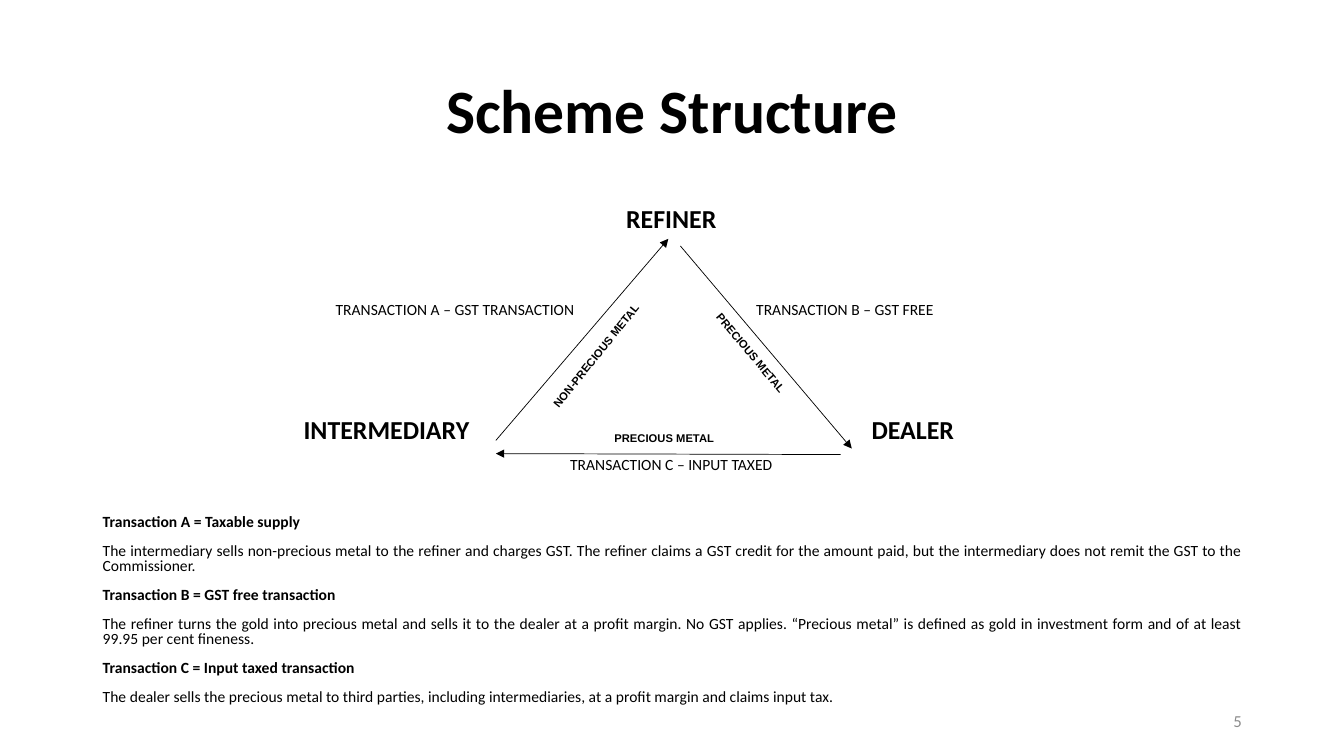
import pptx
import pptx.util
import pptx.dml.color
import pptx.enum.shapes
import pptx.enum.text
from lxml import etree
from pptx.oxml.ns import qn

Pt = pptx.util.Pt
ALIGN = pptx.enum.text.PP_ALIGN
ANCHOR = pptx.enum.text.MSO_ANCHOR

COLOURS = {"text": "000000", "line": "000000", "page": "8C8C8C"}
MARGIN, CONTENT_WIDTH = 73.4, 813.6

# Centre x, centre y, text, size, bold
PARTY_SIZE, BODY_SIZE = 18.5, 11.1
DIAGRAM_LABELS = [
    (479.5, 155.5, "REFINER", PARTY_SIZE, True),
    (276, 306.5, "INTERMEDIARY", PARTY_SIZE, True),
    (652, 306.5, "DEALER", PARTY_SIZE, True),
    (325, 221, "TRANSACTION A – GST TRANSACTION", BODY_SIZE, False),
    (603.5, 221, "TRANSACTION B – GST FREE", BODY_SIZE, False),
    (479.5, 331.5, "TRANSACTION C – INPUT TAXED", BODY_SIZE, False),
]

# Centre x, centre y, text, rotation
METAL_LABELS = [
    (425.5, 254, "NON-PRECIOUS METAL", 308.9),
    (536.4, 252, "PRECIOUS METAL", 50.1),
    (474.5, 313.2, "PRECIOUS METAL", 0),
]

# Start x, start y, end x, end y
ARROWS = [
    (486, 175.7, 608.4, 320.4),
    (600.5, 324.7, 354.2, 324),
    (354.2, 314.6, 477.4, 170.6),
]

EXPLANATIONS = [
    ("Transaction A = Taxable supply",
     "The intermediary sells non-precious metal to the refiner and charges GST. "
     "The refiner claims a GST credit for the amount paid, but the intermediary "
     "does not remit the GST to the Commissioner."),
    ("Transaction B = GST free transaction",
     "The refiner turns the gold into precious metal and sells it to the dealer "
     "at a profit margin. No GST applies. “Precious metal” is defined as gold in "
     "investment form and of at least 99.95 per cent fineness."),
    ("Transaction C = Input taxed transaction",
     "The dealer sells the precious metal to third parties, including "
     "intermediaries, at a profit margin and claims input tax."),
]


def colour(name):
    return pptx.dml.color.RGBColor.from_string(COLOURS[name])


def add_text_box(slide, left, top, width, height, anchor=ANCHOR.MIDDLE):
    shape = slide.shapes.add_textbox(Pt(left), Pt(top), Pt(width), Pt(height))
    frame = shape.text_frame
    frame.word_wrap = True
    frame.vertical_anchor = anchor
    frame.margin_left = frame.margin_right = 0
    frame.margin_top = frame.margin_bottom = 0
    return shape


def write(paragraph, text, size, bold=False, font="Calibri", align=ALIGN.CENTER,
          colour_name="text"):
    paragraph.alignment = align
    run = paragraph.add_run()
    run.text = text
    run.font.name = font
    run.font.size = Pt(size)
    run.font.bold = bold
    run.font.color.rgb = colour(colour_name)


def add_label(slide, centre_x, centre_y, text, size, bold, font="Calibri", rotation=0):
    width, height = 220, 20
    shape = add_text_box(slide, centre_x - width / 2, centre_y - height / 2, width, height)
    shape.rotation = rotation
    write(shape.text_frame.paragraphs[0], text, size, bold, font)


def add_arrow(slide, start_x, start_y, end_x, end_y):
    connector = slide.shapes.add_connector(
        pptx.enum.shapes.MSO_CONNECTOR.STRAIGHT,
        Pt(start_x), Pt(start_y), Pt(end_x), Pt(end_y))
    connector.line.color.rgb = colour("line")
    connector.line.width = Pt(0.5)
    etree.SubElement(connector.line._get_or_add_ln(), qn("a:tailEnd"), type="triangle")
    etree.SubElement(connector._element.spPr, qn("a:effectLst"))


def add_explanations(slide):
    shape = add_text_box(slide, MARGIN, 368.5, CONTENT_WIDTH, 140, ANCHOR.TOP)
    frame = shape.text_frame
    lines = [(text, bold) for heading, detail in EXPLANATIONS
             for text, bold in ((heading, True), (detail, False))]
    for index, (text, bold) in enumerate(lines):
        paragraph = frame.add_paragraph() if index else frame.paragraphs[0]
        paragraph.line_spacing = 0.8
        paragraph.space_before = Pt(10 if index else 0)
        write(paragraph, text, BODY_SIZE, bold, align=ALIGN.JUSTIFY)


def main():
    presentation = pptx.Presentation()
    presentation.slide_width, presentation.slide_height = Pt(960), Pt(540)
    slide = presentation.slides.add_slide(presentation.slide_layouts[6])

    # Title
    title = add_text_box(slide, MARGIN, 28.8, CONTENT_WIDTH, 104.4)
    heading = title.text_frame.paragraphs[0]
    heading.line_spacing = 0.9
    write(heading, "Scheme Structure", 44, True)

    # Triangle of transactions
    for label in DIAGRAM_LABELS:
        add_label(slide, *label)
    for arrow in ARROWS:
        add_arrow(slide, *arrow)
    for centre_x, centre_y, text, rotation in METAL_LABELS:
        add_label(slide, centre_x, centre_y, text, 8, True, "Arial", rotation)

    # Explanations and page number
    add_explanations(slide)
    page = add_text_box(slide, 678, 500.4, 209, 28.8)
    write(page.text_frame.paragraphs[0], "5", 12, align=ALIGN.RIGHT, colour_name="page")

    presentation.save("out.pptx")


if __name__ == "__main__":
    main()
